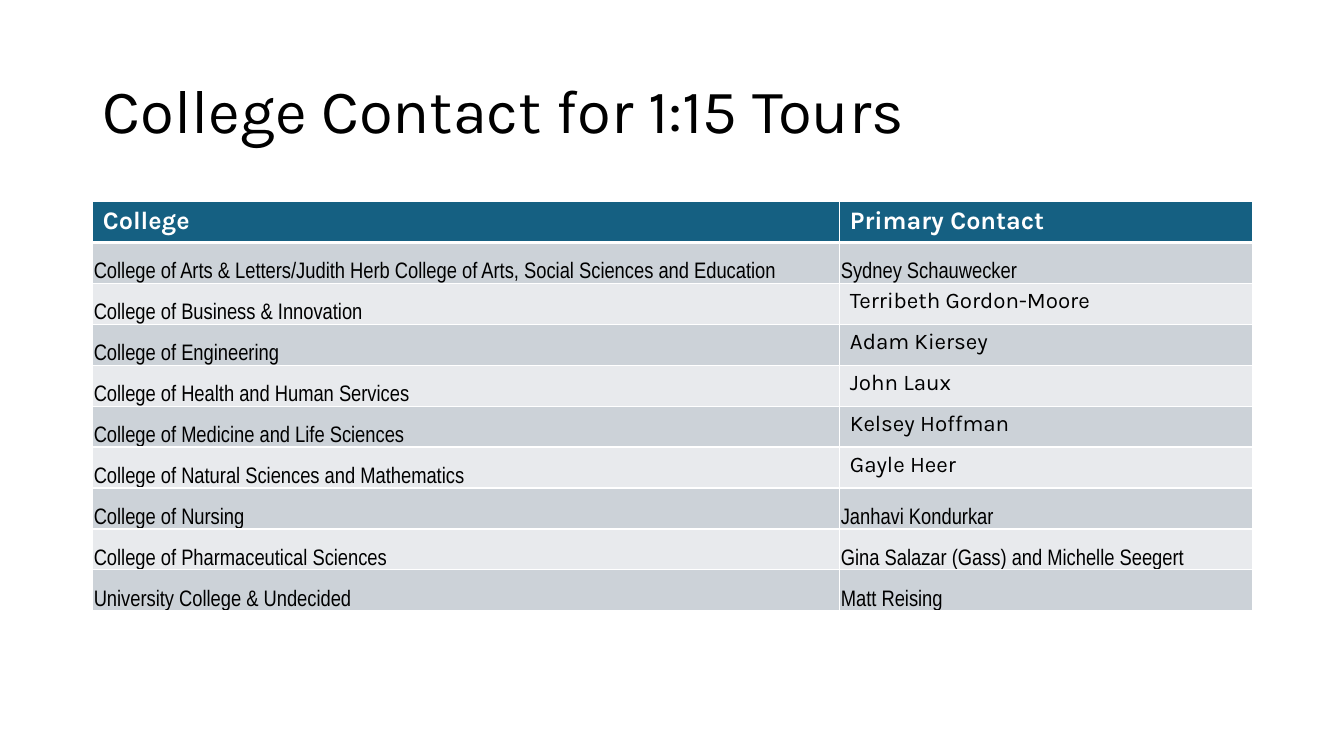
from lxml import etree
from pptx import Presentation
from pptx.dml.color import RGBColor
from pptx.enum.text import MSO_ANCHOR, MSO_AUTO_SIZE, PP_ALIGN
from pptx.oxml.ns import qn
from pptx.util import Inches, Pt

LEFT = PP_ALIGN.LEFT
TOP, MIDDLE, BOTTOM = MSO_ANCHOR.TOP, MSO_ANCHOR.MIDDLE, MSO_ANCHOR.BOTTOM
NO_FIT = MSO_AUTO_SIZE.NONE
TITLE_ONLY = 5

HEADERS = ("College", "Primary Contact")
CONTACTS = [
    ("College of Arts & Letters/Judith Herb College of Arts, Social Sciences and Education",
     "Sydney Schauwecker"),
    ("College of Business & Innovation", "Terribeth Gordon-Moore"),
    ("College of Engineering", "Adam Kiersey"),
    ("College of Health and Human Services", "John Laux"),
    ("College of Medicine and Life Sciences", "Kelsey Hoffman"),
    ("College of Natural Sciences and Mathematics", "Gayle Heer"),
    ("College of Nursing", "Janhavi Kondurkar"),
    ("College of Pharmaceutical Sciences", "Gina Salazar (Gass) and Michelle Seegert"),
    ("University College & Undecided", "Matt Reising"),
]
# Contacts set in the theme font with normal cell margins
ROOMY_CONTACTS = range(2, 7)


def rgb(value):
    return RGBColor.from_string(value)


class SlideBuilder:
    THEME_FONT, NARROW_FONT = "Karla", "Arial Narrow"
    BLACK, WHITE, HEADER = "000000", "FFFFFF", "156082"
    BANDS = ("E8EAED", "CCD2D8")

    def __init__(self, prs):
        self.slide = prs.slides.add_slide(prs.slide_layouts[TITLE_ONLY])

    def style(self, p, font, size, color, bold=False):
        p.alignment = LEFT
        p.font.name = font
        p.font.size = Pt(size)
        p.font.bold = bold
        p.font.color.rgb = rgb(color)

    def title(self, text, left, top, width, height):
        sp = self.slide.shapes.title
        sp.left, sp.top = Inches(left), Inches(top)
        sp.width, sp.height = Inches(width), Inches(height)
        tf = sp.text_frame
        tf.text = text
        tf.word_wrap = True
        tf.auto_size = NO_FIT
        tf.vertical_anchor = MIDDLE
        p = tf.paragraphs[0]
        p.line_spacing = 0.9
        self.style(p, self.THEME_FONT, 44, self.BLACK)

    def borders(self, cell, top, bottom):
        tc_pr = cell._tc.get_or_add_tcPr()
        for side, width in (("L", 1), ("R", 1), ("T", top), ("B", bottom)):
            ln = etree.SubElement(tc_pr, qn(f"a:ln{side}"), w=str(Pt(width)))
            fill = etree.SubElement(ln, qn("a:solidFill"))
            etree.SubElement(fill, qn("a:srgbClr"), val=self.WHITE)

    def cell(self, cell, text, row, col):
        header = row == 0
        roomy = header or (col == 1 and row in ROOMY_CONTACTS)
        self.borders(cell, 3 if row == 1 else 1, 3 if header else 1)
        cell.fill.solid()
        cell.fill.fore_color.rgb = rgb(self.HEADER if header else self.BANDS[row % 2])
        cell.vertical_anchor = TOP if roomy else BOTTOM
        if not roomy:
            cell.margin_left = cell.margin_right = cell.margin_top = Inches(0.01)
            cell.margin_bottom = 0
        cell.text = text
        self.style(cell.text_frame.paragraphs[0],
                   self.THEME_FONT if roomy else self.NARROW_FONT,
                   18 if header else 16,
                   self.WHITE if header else self.BLACK, header)

    def table(self, rows, left, top, col_widths, height):
        frame = self.slide.shapes.add_table(
            len(rows), len(col_widths), Inches(left), Inches(top),
            Inches(sum(col_widths)), Inches(height))
        table = frame.table
        for column, width in zip(table.columns, col_widths):
            column.width = Inches(width)
        for r, texts in enumerate(rows):
            for c, text in enumerate(texts):
                self.cell(table.cell(r, c), text, r, c)


def main():
    prs = Presentation()
    prs.slide_width, prs.slide_height = Inches(13.33), Inches(7.5)
    s = SlideBuilder(prs)

    # Title
    s.title("College Contact for 1:15 Tours", 0.92, 0.4, 11.5, 1.45)

    # Contact table
    s.table([HEADERS, *CONTACTS], 0.92, 2, (7.41, 4.09), 4.06)

    prs.save("out.pptx")


if __name__ == "__main__":
    main()
